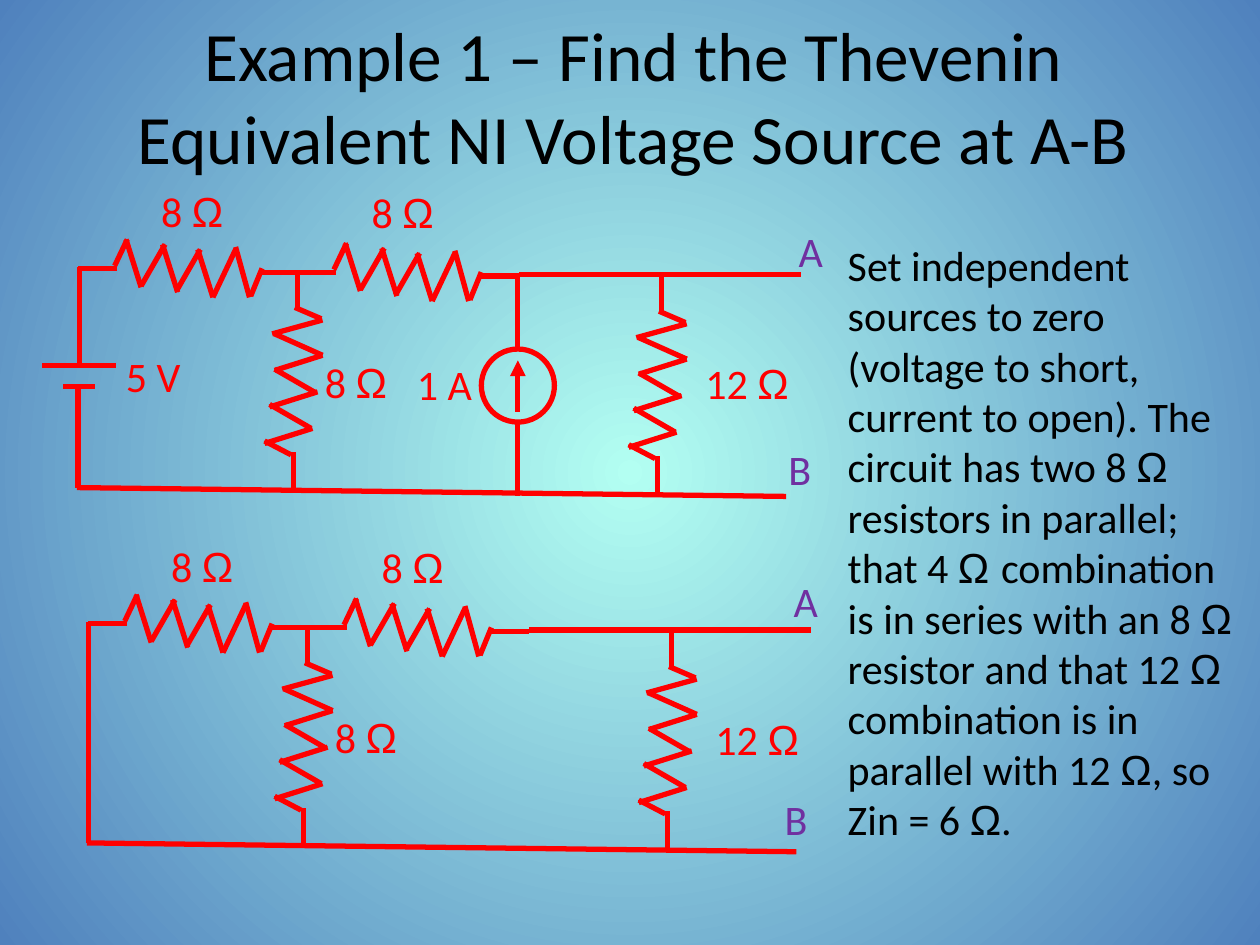
from lxml import etree
from pptx import Presentation
from pptx.dml.color import RGBColor
from pptx.enum import shapes, text
from pptx.oxml import ns
from pptx.util import Inches, Pt

RED, PURPLE, BLACK = "FF0000", "7030A0", "000000"

# Zigzag segments x1, y1, x2, y2, measured from the start of the first lead
ACROSS = [
    (0, 0, 0.31, 0), (0.39, -0.23, 0.29, -0.02), (0.38, -0.23, 0.5, 0.15),
    (0.69, -0.19, 0.5, 0.14), (0.67, -0.19, 0.79, 0.19), (0.97, -0.15, 0.78, 0.18),
    (0.95, -0.15, 1.07, 0.23), (1.25, -0.15, 1.07, 0.23), (1.25, -0.17, 1.36, 0.23),
    (1.37, 0.22, 1.46, 0), (1.45, 0.03, 1.76, 0.03),
]
DOWN = [
    (0, 0.3, 0, 0), (0.19, 0.39, -0.02, 0.3), (-0.2, 0.51, 0.2, 0.4),
    (-0.18, 0.51, 0.2, 0.68), (-0.18, 0.8, 0.2, 0.68), (-0.18, 0.79, 0.15, 0.98),
    (-0.22, 1.09, 0.16, 0.97), (-0.22, 1.07, 0.11, 1.26), (-0.26, 1.38, 0.12, 1.26),
    (-0.26, 1.36, -0.05, 1.47), (-0.03, 1.75, -0.03, 1.45),
]
RESISTORS = [(DOWN, 2.36, 2.14), (ACROSS, 0.62, 2.13), (ACROSS, 2.36, 2.16), (DOWN, 5.25, 2.17)]
RAILS = [(0.61, 3.87, 6.24, 3.94), (4.12, 2.18, 6.36, 2.18)]
RESISTANCES = [
    ("8 |Ω", 1.18, 1.42, 0.71), ("8 |Ω", 2.48, 2.78, 0.71),
    ("8 |Ω", 2.85, 1.43, 0.71), ("12 |Ω", 5.5, 2.79, 0.88),
]
SOURCE_WIRES = [
    (4.11, 2.19, 4.11, 2.77), (4.11, 3.36, 4.11, 3.94),
    (0.63, 2.12, 0.63, 2.9), (0.62, 3.09, 0.62, 3.87),
    (0.92, 2.9, 0.33, 2.9), (0.75, 3.07, 0.5, 3.07),
]
SOURCE_LABELS = [("5 V", 0.9, 2.73, 0.64), ("1 A", 3.21, 2.8, 0.64)]
TERMINALS = [("A", 6.24, 1.74), ("B", 6.16, 3.47), ("A", 6.2, 4.52), ("B", 6.13, 6.25)]
EXPLANATION = (
    "Set independent sources to zero (voltage to short, current to open). "
    "The circuit has two 8 |Ω| resistors in parallel; that 4 |Ω |combination is in series "
    "with an 8 |Ω |resistor and that 12 |Ω| combination is in parallel with 12 |Ω|, "
    "so Zin = 6 |Ω|."
)


def color(value):
    return RGBColor.from_string(value)


def assign(target, values):
    for name, value in values.items():
        setattr(target, name, value)


class Painter:
    fonts = ("Calibri", "Arial")
    size = 24
    line_width = 3

    def __init__(self, slide):
        self.slide = slide
        self.target = slide.shapes
        self.dx = self.dy = 0

    def start_circuit(self, dx, dy):
        """Collect the following elements in a group, shifted by dx and dy."""
        self.target = self.slide.shapes.add_group_shape().shapes
        self.dx, self.dy = dx, dy

    def end_circuit(self):
        self.target = self.slide.shapes
        self.dx = self.dy = 0

    def place(self, left, top):
        return Inches(left + self.dx), Inches(top + self.dy)

    def background(self, center, edge):
        fill = self.slide.background.fill
        fill.gradient()
        for stop, position, value in zip(fill.gradient_stops, (0, 1), (center, edge)):
            stop.position = position
            stop.color.rgb = color(value)
        gradient = self.slide.element.find(".//" + ns.qn("a:gradFill"))
        gradient.remove(gradient.find(ns.qn("a:lin")))
        radial = etree.SubElement(gradient, ns.qn("a:path"), {"path": "circle"})
        etree.SubElement(radial, ns.qn("a:fillToRect"), dict.fromkeys("ltrb", "50000"))

    def add_words(self, para, words, size, value):
        """Add runs for words, where | switches between the two fonts."""
        for index, part in enumerate(words.split("|")):
            span = para.add_run()
            span.text = part
            assign(span.font, {"name": self.fonts[index % 2], "size": Pt(size)})
            span.font.color.rgb = color(value)

    def title(self, words, left, top, width, height):
        box = self.slide.shapes.title
        assign(box, {"left": Inches(left), "top": Inches(top),
                     "width": Inches(width), "height": Inches(height)})
        assign(box.text_frame, {"vertical_anchor": text.MSO_ANCHOR.MIDDLE, "word_wrap": True,
                                "auto_size": text.MSO_AUTO_SIZE.NONE})
        para = box.text_frame.paragraphs[0]
        para.alignment = text.PP_ALIGN.CENTER
        self.add_words(para, words, 39.6, BLACK)

    def label(self, words, left, top, width, height=0.5, value=RED, wrap=False):
        box = self.target.add_textbox(*self.place(left, top), Inches(width), Inches(height))
        assign(box.text_frame, {"word_wrap": wrap,
                                "auto_size": text.MSO_AUTO_SIZE.SHAPE_TO_FIT_TEXT})
        self.add_words(box.text_frame.paragraphs[0], words, self.size, value)

    def wire(self, x1, y1, x2, y2, arrow=False):
        wire = self.target.add_connector(
            shapes.MSO_CONNECTOR.STRAIGHT, *self.place(x1, y1), *self.place(x2, y2))
        wire.line.width = Pt(self.line_width)
        wire.line.color.rgb = color(RED)
        properties = wire.element.spPr
        if arrow:
            outline = properties.find(ns.qn("a:ln"))
            etree.SubElement(outline, ns.qn("a:tailEnd"), {"type": "triangle"})
        etree.SubElement(properties, ns.qn("a:effectLst"))

    def resistor(self, zigzag, left, top):
        for x1, y1, x2, y2 in zigzag:
            self.wire(left + x1, top + y1, left + x2, top + y2)

    def circle(self, left, top, size):
        ring = self.target.add_shape(
            shapes.MSO_SHAPE.OVAL, *self.place(left, top), Inches(size), Inches(size))
        ring.shadow.inherit = False
        ring.fill.background()
        ring.line.width = Pt(self.line_width)
        ring.line.color.rgb = color(RED)

    def resistor_network(self):
        for resistor in RESISTORS:
            self.resistor(*resistor)
        for rail in RAILS:
            self.wire(*rail)
        for resistance in RESISTANCES:
            self.label(*resistance)

    def sources(self):
        for wire in SOURCE_WIRES:
            self.wire(*wire)
        self.circle(3.82, 2.77, 0.58)
        self.wire(4.11, 3.27, 4.11, 2.86, arrow=True)
        for label in SOURCE_LABELS:
            self.label(*label)


def main():
    deck = Presentation()
    assign(deck, {"slide_width": Inches(10), "slide_height": Inches(7.5)})
    page = Painter(deck.slides.add_slide(deck.slide_layouts[5]))
    page.background("B3FFF2", "4F81BD")
    page.title("Example 1 – Find the Thevenin Equivalent NI Voltage Source at A-B",
               0.53, 0.17, 9, 1.17)

    page.start_circuit(0, 0)
    page.sources()
    page.resistor_network()

    page.start_circuit(0.08, 2.82)
    page.wire(0.62, 2.12, 0.62, 3.87)
    page.resistor_network()
    page.end_circuit()

    page.label(EXPLANATION, 6.63, 1.85, 3.26, 4.95, BLACK, wrap=True)
    for name, left, top in TERMINALS:
        page.label(name, left, top, 0.4, value=PURPLE)
    deck.save("out.pptx")


if __name__ == "__main__":
    main()
